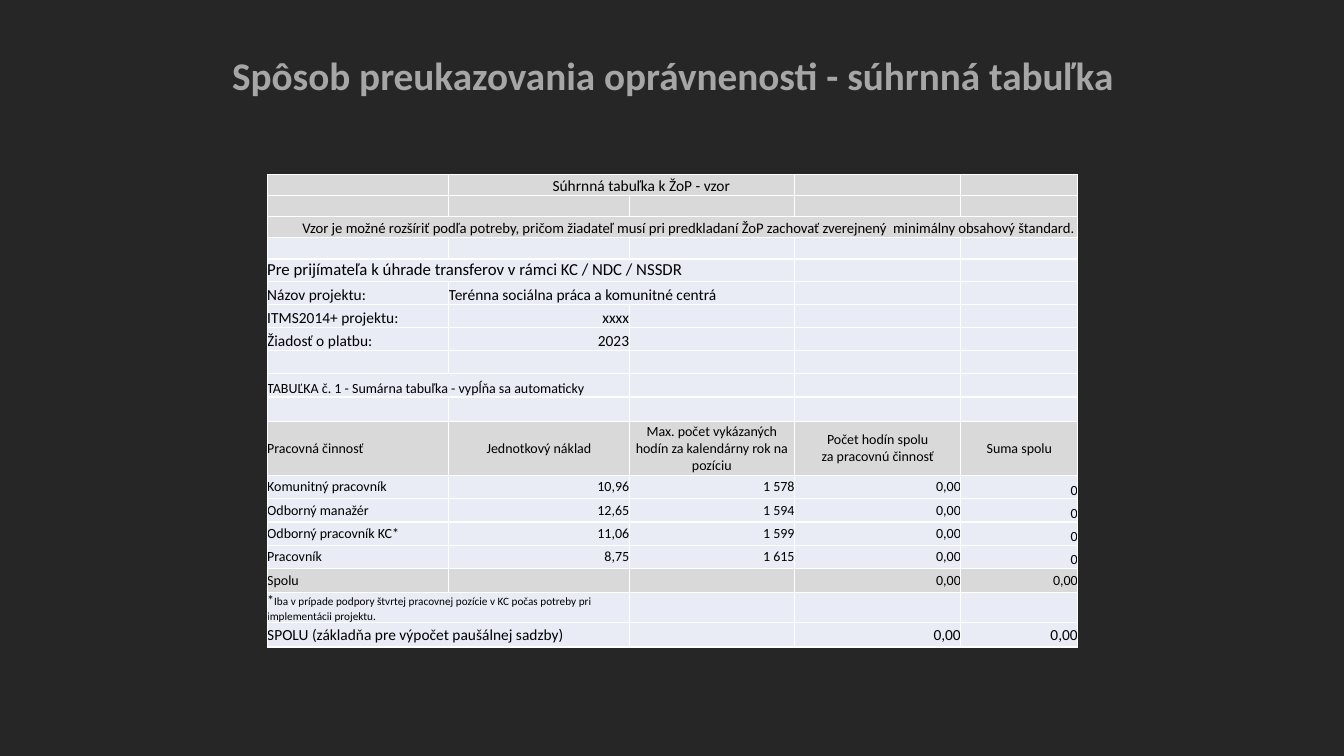
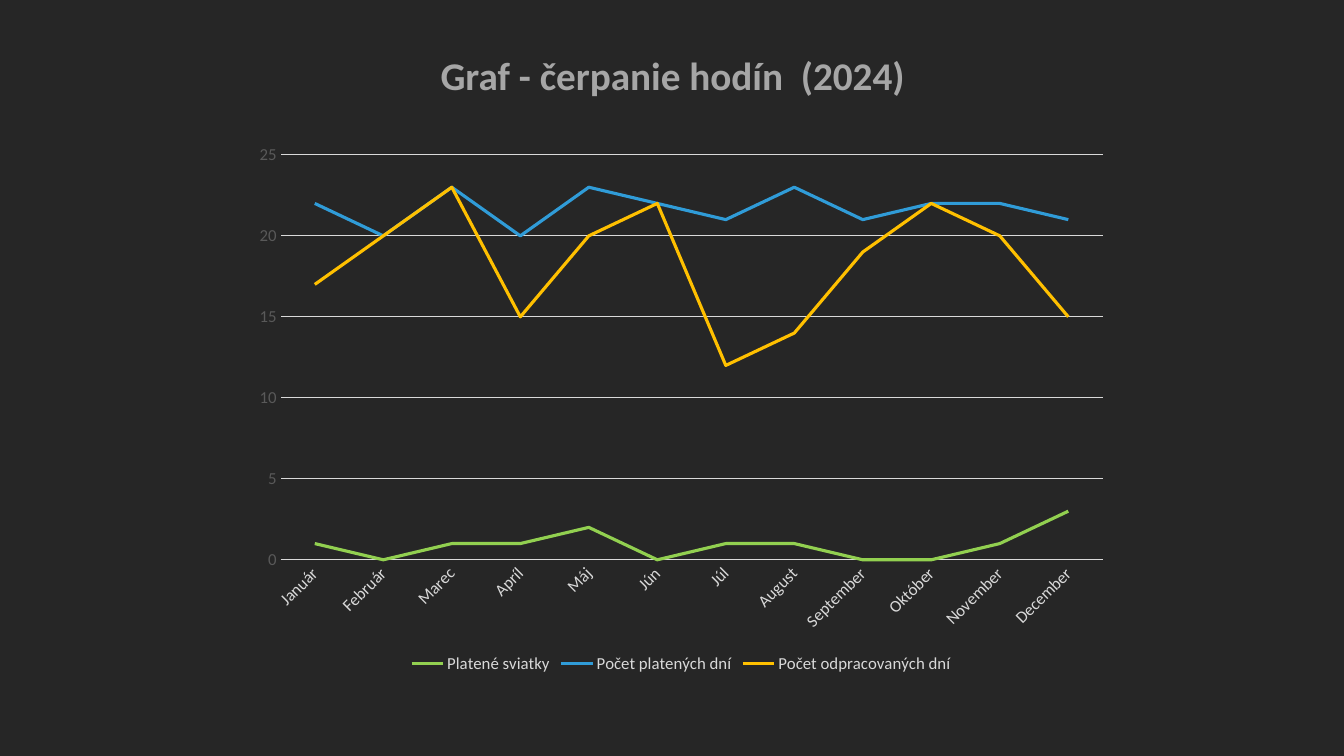
from dataclasses import dataclass

from lxml.etree import SubElement
from pptx import Presentation
from pptx.chart.data import CategoryChartData
from pptx.dml.color import RGBColor
from pptx.enum.chart import XL_CHART_TYPE, XL_LEGEND_POSITION, XL_TICK_MARK
from pptx.enum.text import MSO_ANCHOR, PP_ALIGN
from pptx.oxml.ns import qn
from pptx.util import Inches, Pt

TOP, MIDDLE, BOTTOM = MSO_ANCHOR.TOP, MSO_ANCHOR.MIDDLE, MSO_ANCHOR.BOTTOM
LEFT, CENTER, RIGHT = PP_ALIGN.LEFT, PP_ALIGN.CENTER, PP_ALIGN.RIGHT


@dataclass(frozen=True)
class Theme:
    font: str = "Calibri"
    background: str = "262626"
    title: str = "A6A6A6"
    text: str = "000000"
    border: str = "FFFFFF"
    band: str = "D9D9D9"
    cell: str = "E9EBF5"
    grid: str = "D9D9D9"
    value_label: str = "595959"
    series: tuple = ("92D050", "309CD8", "FFC000")
    title_size: float = 28
    chart_size: float = 12
    heading_size: float = 12
    field_size: float = 11
    note_size: float = 10.5
    table_size: float = 10
    footnote_size: float = 8


@dataclass(frozen=True)
class Box:
    left: float
    top: float
    width: float
    height: float

    def lengths(self):
        return [Inches(n) for n in (self.left, self.top, self.width, self.height)]


@dataclass(frozen=True)
class Row:
    """One table row; align applies to every column but the first."""
    height: float
    texts: tuple = ()
    size: float = Theme.table_size
    fill: str = Theme.cell
    anchor: int = MIDDLE
    last_anchor: int = MIDDLE
    align: int = RIGHT
    merge: tuple = ()
    indent: float = 0


THEME = Theme()
TITLE_BOX = Box(0.92, 0.22, 11.5, 1.1)
TABLE_BOX = Box(2.65, 1.73, 8.04, 4.6)
CHART_BOX = Box(2.4, 1.33, 8.71, 5.39)

COLUMN_WIDTHS = (1.8, 1.79, 1.64, 1.65, 1.16)
FOOTNOTE_MARK = "*"
FOOTNOTE = ("Iba v prípade podpory štvrtej pracovnej pozície v KC počas potreby "
            "pri implementácii projektu.")
POSITIONS = (
    ("Komunitný pracovník", "10,96", "1 578"),
    ("Odborný manažér", "12,65", "1 594"),
    ("Odborný pracovník KC*", "11,06", "1 599"),
    ("Pracovník", "8,75", "1 615"),
)
ROWS = (
    Row(0.21, ("", "Súhrnná tabuľka k ŽoP - vzor"), THEME.field_size, THEME.band,
        BOTTOM, align=LEFT, merge=(1, 2), indent=1.03),
    Row(0.21, fill=THEME.band),
    Row(0.21, ("Vzor je možné rozšíriť podľa potreby, pričom žiadateľ musí pri predkladaní "
               "ŽoP zachovať zverejnený  minimálny obsahový štandard.",),
        THEME.note_size, THEME.band, BOTTOM, merge=(0, 4), indent=0.35),
    Row(0.21),
    Row(0.22, ("Pre prijímateľa k úhrade transferov v rámci KC / NDC / NSSDR",),
        THEME.heading_size, merge=(0, 2)),
    Row(0.23, ("Názov projektu:", "Terénna sociálna práca a komunitné centrá"),
        THEME.field_size, anchor=BOTTOM, align=LEFT, merge=(1, 2)),
    Row(0.23, ("ITMS2014+ projektu:", "xxxx"), THEME.field_size, anchor=BOTTOM),
    Row(0.23, ("Žiadosť o platbu:", "2023"), THEME.field_size, anchor=BOTTOM),
    Row(0.23),
    Row(0.23, ("TABUĽKA č. 1 - Sumárna tabuľka - vypĺňa sa automaticky",),
        anchor=BOTTOM, merge=(0, 1)),
    Row(0.24),
    Row(0.54, ("Pracovná činnosť", "Jednotkový náklad",
               "Max. počet vykázaných hodín za kalendárny rok na pozíciu",
               "Počet hodín spolu\nza pracovnú činnosť", "Suma spolu"),
        fill=THEME.band, align=CENTER),
    *(Row(0.23, (*position, "0,00", "0"), last_anchor=BOTTOM) for position in POSITIONS),
    Row(0.24, ("Spolu", "", "", "0,00", "0,00"), fill=THEME.band),
    Row(0.2, (FOOTNOTE_MARK,), anchor=BOTTOM, merge=(0, 1)),
    Row(0.24, ("SPOLU (základňa pre výpočet paušálnej sadzby)", "", "", "0,00", "0,00"),
        THEME.field_size, merge=(0, 1)),
)

MONTHS = ("Január", "Február", "Marec", "Apríl", "Máj", "Jún", "Júl", "August",
          "September", "Október", "November", "December")
DAYS = {
    "Platené sviatky": (1, 0, 1, 1, 2, 0, 1, 1, 0, 0, 1, 3),
    "Počet platených dní": (22, 20, 23, 20, 23, 22, 21, 23, 21, 22, 22, 21),
    "Počet odpracovaných dní": (17, 20, 23, 15, 20, 22, 12, 14, 19, 22, 20, 15),
}


def style_font(font, size, color, bold=False):
    font.name = THEME.font
    font.size = Pt(size)
    font.bold = bold
    font.color.rgb = RGBColor.from_string(color)


def style_line(line, color, width):
    line.color.rgb = RGBColor.from_string(color)
    line.width = Pt(width)


def add_titled_page(deck, title):
    page = deck.slides.add_slide(deck.slide_layouts[6])
    page.background.fill.solid()
    page.background.fill.fore_color.rgb = RGBColor.from_string(THEME.background)
    frame = page.shapes.add_textbox(*TITLE_BOX.lengths()).text_frame
    frame.word_wrap = True
    frame.vertical_anchor = MIDDLE
    frame.text = title
    para = frame.paragraphs[0]
    para.alignment = CENTER
    para.line_spacing = 0.9
    style_font(para.runs[0].font, THEME.title_size, THEME.title, bold=True)
    return page


def add_borders(cell):
    """Draw the four borders; they must precede the fill in the cell's XML."""
    properties = cell._tc.get_or_add_tcPr()
    for side in ("a:lnL", "a:lnR", "a:lnT", "a:lnB"):
        border = SubElement(properties, qn(side), w=str(Pt(1)))
        fill = SubElement(border, qn("a:solidFill"))
        SubElement(fill, qn("a:srgbClr"), val=THEME.border)


def fill_cell(cell, row, column):
    add_borders(cell)
    cell.fill.solid()
    cell.fill.fore_color.rgb = RGBColor.from_string(row.fill)
    cell.margin_left = cell.margin_right = cell.margin_top = cell.margin_bottom = 0
    cell.vertical_anchor = row.last_anchor if column == 4 else row.anchor
    text = row.texts[column] if column < len(row.texts) else ""
    if not text:
        # Keeps an empty cell from stretching its row.
        ending = cell.text_frame.paragraphs[0]._p.get_or_add_endParaRPr()
        ending.set("sz", str(THEME.table_size * 100))
        return
    if row.merge and column == row.merge[0]:
        cell.margin_left = Inches(row.indent)
    cell.text_frame.text = text
    for para in cell.text_frame.paragraphs:
        para.alignment = row.align if column else LEFT
        for span in para.runs:
            style_font(span.font, row.size, THEME.text)
    if text == FOOTNOTE_MARK:
        span = cell.text_frame.paragraphs[0].add_run()
        span.text = FOOTNOTE
        style_font(span.font, THEME.footnote_size, THEME.text)


def add_summary_table(page, box):
    table = page.shapes.add_table(len(ROWS), len(COLUMN_WIDTHS), *box.lengths()).table
    table.first_row = table.horz_banding = False
    for column, width in zip(table.columns, COLUMN_WIDTHS):
        column.width = Inches(width)
    for index, row in enumerate(ROWS):
        table.rows[index].height = Inches(row.height)
        for column in range(len(COLUMN_WIDTHS)):
            fill_cell(table.cell(index, column), row, column)
        if row.merge:
            first, last = row.merge
            table.cell(index, first).merge(table.cell(index, last))


def style_axis(axis, label_color):
    axis.major_tick_mark = axis.minor_tick_mark = XL_TICK_MARK.NONE
    style_font(axis.tick_labels.font, THEME.chart_size, label_color)


def add_days_chart(page, box):
    data = CategoryChartData()
    data.categories = MONTHS
    for name, values in DAYS.items():
        data.add_series(name, values)
    chart = page.shapes.add_chart(XL_CHART_TYPE.LINE, *box.lengths(), data).chart
    chart.has_title = False
    style_font(chart.font, THEME.table_size, THEME.text)

    chart.has_legend = True
    chart.legend.position = XL_LEGEND_POSITION.BOTTOM
    chart.legend.include_in_layout = False
    style_font(chart.legend.font, THEME.chart_size, THEME.grid)

    months = chart.category_axis
    style_axis(months, THEME.grid)
    style_line(months.format.line, THEME.grid, 0.75)
    label_body = months._element.find(qn("c:txPr")).find(qn("a:bodyPr"))
    label_body.set("rot", str(-45 * 60000))

    days = chart.value_axis
    style_axis(days, THEME.value_label)
    days.minimum_scale, days.maximum_scale, days.major_unit = 0, 25, 5
    days.format.line.fill.background()
    days.has_major_gridlines = True
    style_line(days.major_gridlines.format.line, THEME.grid, 0.75)

    plot = chart.plots[0]
    plot.vary_by_categories = False
    for series, color in zip(plot.series, THEME.series):
        series.smooth = False
        style_line(series.format.line, color, 2.25)


def main():
    deck = Presentation()
    deck.slide_width, deck.slide_height = Inches(13.33), Inches(7.5)
    page = add_titled_page(deck, "Spôsob preukazovania oprávnenosti - súhrnná tabuľka")
    add_summary_table(page, TABLE_BOX)
    page = add_titled_page(deck, "Graf - čerpanie hodín  (2024)")
    add_days_chart(page, CHART_BOX)
    deck.save("out.pptx")


if __name__ == "__main__":
    main()
